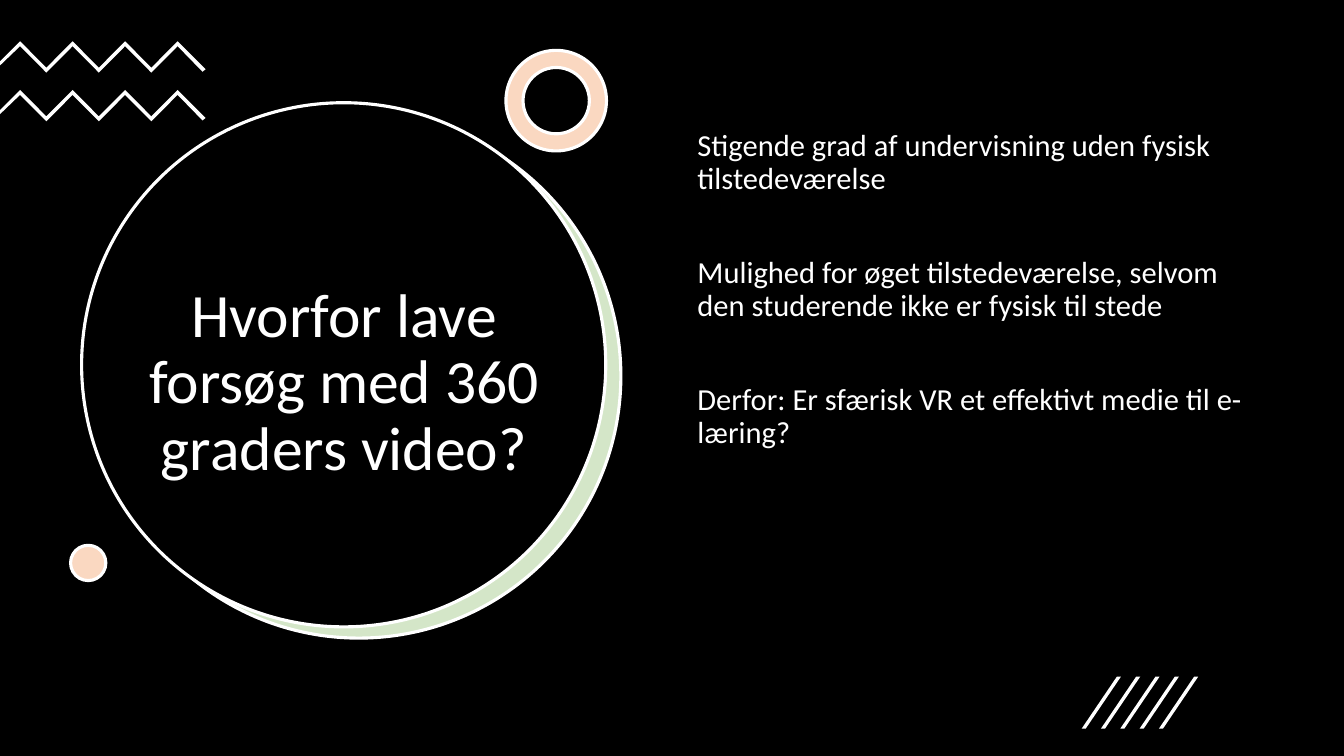
from pptx import Presentation
from pptx.dml.color import RGBColor
from pptx.enum import shapes, text
from pptx.util import Pt

COLORS = {"black": "000000", "white": "FFFFFF", "green": "D4E6C8", "peach": "FAD8C1"}


def style_shape(shape, fill, outlined):
    shape.shadow.inherit = False
    shape.fill.solid()
    shape.fill.fore_color.rgb = RGBColor.from_string(COLORS[fill])
    if outlined:
        shape.line.color.rgb = RGBColor.from_string(COLORS["white"])
        shape.line.width = Pt(2.25)
    else:
        shape.line.fill.background()


def add_polygon(slide, points):
    corners = [(Pt(x), Pt(y)) for x, y in points]
    builder = slide.shapes.build_freeform(*corners[0], scale=1.0)
    builder.add_line_segments(corners[1:], close=True)
    style_shape(builder.convert_to_shape(), "white", False)


presentation = Presentation()
presentation.slide_width = Pt(960)
presentation.slide_height = Pt(540)
slide = presentation.slides.add_slide(presentation.slide_layouts[0])
slide.background.fill.solid()
slide.background.fill.fore_color.rgb = RGBColor.from_string(COLORS["black"])

circles = [
    (shapes.MSO_SHAPE.OVAL, 69.1, 81.4, 374.4, "green"),
    (shapes.MSO_SHAPE.OVAL, 58.3, 73.4, 374.4, "black"),
    (shapes.MSO_SHAPE.DONUT, 361.4, 36, 71.8, "peach"),
    (shapes.MSO_SHAPE.OVAL, 50.4, 389.5, 25.2, "peach"),
]
for kind, left, top, size, fill in circles:
    circle = slide.shapes.add_shape(kind, Pt(left), Pt(top), Pt(size), Pt(size))
    style_shape(circle, fill, True)
    if kind == shapes.MSO_SHAPE.DONUT:
        circle.adjustments[0] = 0.17

for top in (29.5, 64.3):
    zigzag = [(14.4 + 18.75 * i, top + 18.9 * (i % 2)) for i in range(7)]
    underside = [(x, y + 3.5) for x, y in reversed(zigzag)]
    add_polygon(slide, [(0, top + 14.4), *zigzag, (146.9, top + 20),
                        (144.7, top + 21.8), *underside, (0, top + 17.3)])

for i in range(5):
    left = 772.6 + 13.8 * i
    add_polygon(slide, [(left, 520.5), (left + 25.2, 483.3),
                        (left + 28.1, 483.3), (left + 2.9, 520.5)])

title = slide.shapes.title
reasons = slide.placeholders[1]
title.text_frame.text = "Hvorfor lave forsøg med 360 graders video?"
reasons.text_frame.text = "\n".join([
    "Stigende grad af undervisning uden fysisk tilstedeværelse",
    "Mulighed for øget tilstedeværelse, selvom den studerende ikke er fysisk til stede",
    "Derfor: Er sfærisk VR et effektivt medie til e-læring?",
])
placeholders = [
    (title, (87.1, 147.6, 317.5, 253.4), 44, text.PP_ALIGN.CENTER, text.MSO_ANCHOR.MIDDLE),
    (reasons, (491, 89.3, 411.1, 342.7), 21.8, text.PP_ALIGN.LEFT, text.MSO_ANCHOR.TOP),
]
for placeholder, box, size, alignment, anchor in placeholders:
    placeholder.left, placeholder.top, placeholder.width, placeholder.height = map(Pt, box)
    placeholder.element.getparent().append(placeholder.element)
    frame = placeholder.text_frame
    frame.word_wrap = True
    frame.auto_size = text.MSO_AUTO_SIZE.NONE
    frame.vertical_anchor = anchor
    for i, paragraph in enumerate(frame.paragraphs):
        paragraph.alignment = alignment
        paragraph.line_spacing = 0.9
        paragraph.space_before = Pt(43.5 if i else 0)
        for run in paragraph.runs:
            run.font.name = "Calibri"
            run.font.size = Pt(size)
            run.font.color.rgb = RGBColor.from_string(COLORS["white"])

presentation.save("out.pptx")
